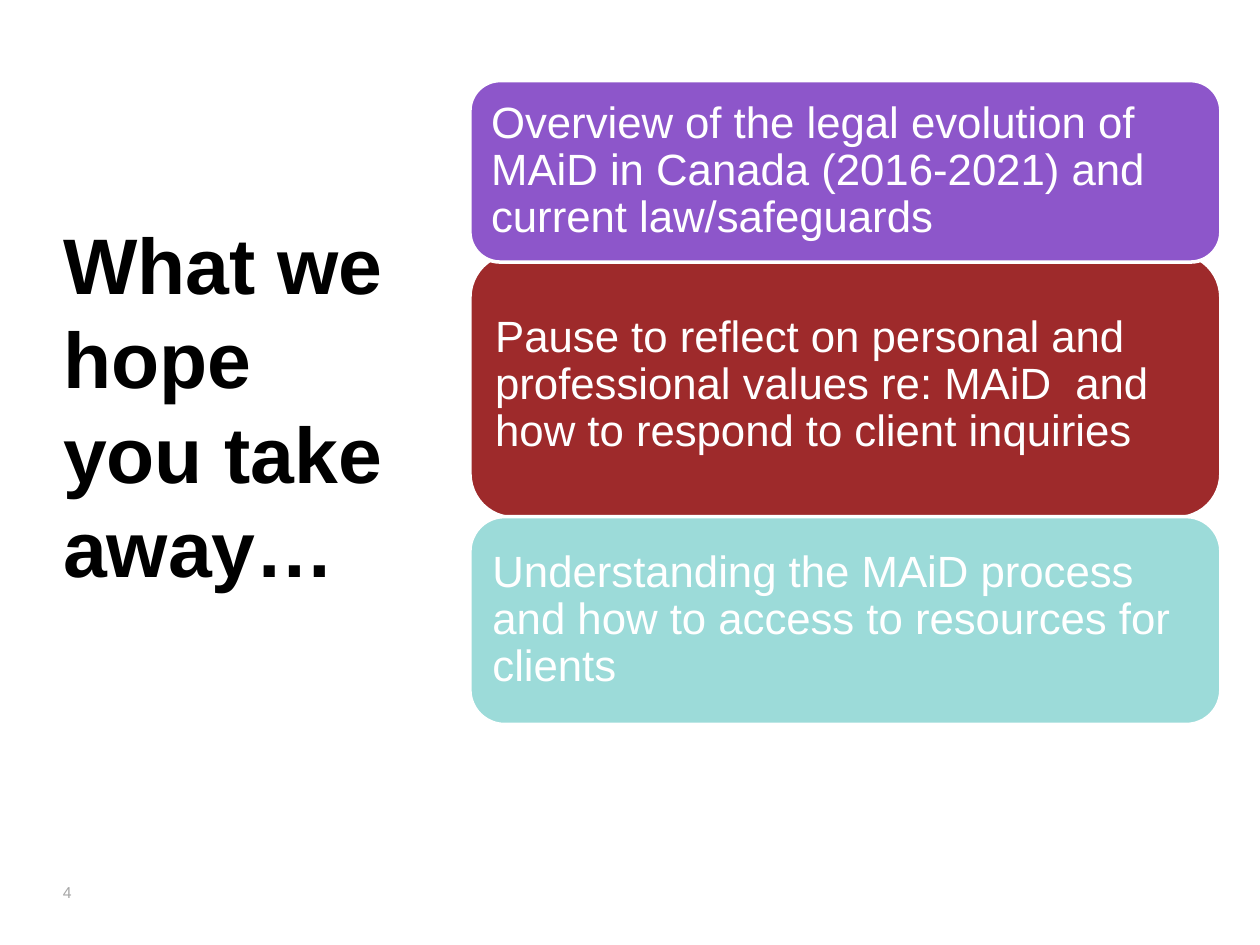
from dataclasses import dataclass

from pptx import Presentation
from pptx.dml.color import RGBColor
from pptx.enum.shapes import MSO_SHAPE as Preset
from pptx.enum.text import MSO_ANCHOR as Anchor, PP_ALIGN as Align
from pptx.slide import Slide
from pptx.text.text import TextFrame
from pptx.util import Inches, Pt

SLIDE_WIDTH, SLIDE_HEIGHT = 10, 7.5
MARGIN = 0.05 * SLIDE_WIDTH
CARD_LEFT = 0.373 * SLIDE_WIDTH
CARD_WIDTH = 0.596 * SLIDE_WIDTH


@dataclass(frozen=True)
class Takeaway:
    top: float
    height: float
    fill: str
    wording: str


@dataclass(frozen=True)
class Label:
    wording: str
    top: float
    width: float
    height: float
    size: float
    color: str
    bold: bool = False
    anchor: Anchor = Anchor.TOP
    line_height: float | None = None


TAKEAWAYS = [
    Takeaway(2.01, 2.1, "9E2A2B",
             "Pause to reflect on personal and professional values re: MAiD  and "
             "how to respond to client inquiries"),
    Takeaway(0.64, 1.44, "8D56CA",
             "Overview of the legal evolution of MAiD in Canada (2016-2021) and "
             "current law/safeguards"),
    Takeaway(4.1, 1.65, "9CDBD9",
             "Understanding the MAiD process and how to access to resources for clients"),
]

LABELS = [
    Label("What we hope you take away…", 1.71, 2.75, 4.34, 45, "000000",
          bold=True, line_height=54),
    Label("4", 6.53, 2, 0.63, 9, "A6A6A6", anchor=Anchor.BOTTOM),
]


def rgb(color: str) -> RGBColor:
    return RGBColor.from_string(color)


def write(frame: TextFrame, wording: str, size: float, color: str,
          inset: float, anchor: Anchor, bold: bool = False) -> None:
    frame.word_wrap = True
    frame.vertical_anchor = anchor
    frame.margin_left = frame.margin_right = Inches(inset)
    frame.margin_top = frame.margin_bottom = Inches(inset)
    paragraph = frame.paragraphs[0]
    paragraph.alignment = Align.LEFT
    run = paragraph.add_run()
    run.text = wording
    run.font.name = "Arial"
    run.font.size = Pt(size)
    run.font.bold = bold
    run.font.color.rgb = rgb(color)


def draw_label(slide: Slide, label: Label) -> None:
    box = slide.shapes.add_textbox(Inches(MARGIN), Inches(label.top),
                                   Inches(label.width), Inches(label.height))
    write(box.text_frame, label.wording, label.size, label.color,
          0, label.anchor, label.bold)
    if label.line_height:
        box.text_frame.paragraphs[0].line_spacing = Pt(label.line_height)


def draw_takeaway(slide: Slide, takeaway: Takeaway) -> None:
    card = slide.shapes.add_shape(Preset.ROUNDED_RECTANGLE,
                                  Inches(CARD_LEFT), Inches(takeaway.top),
                                  Inches(CARD_WIDTH), Inches(takeaway.height))
    card.shadow.inherit = False
    card.fill.solid()
    card.fill.fore_color.rgb = rgb(takeaway.fill)
    card.line.color.rgb = rgb("FFFFFF")
    card.line.width = Pt(2)
    write(card.text_frame, takeaway.wording, 25, "FFFFFF", 0.1, Anchor.MIDDLE)
    card.text_frame.paragraphs[0].line_spacing = 0.9


def main() -> None:
    deck = Presentation()
    deck.slide_width = Inches(SLIDE_WIDTH)
    deck.slide_height = Inches(SLIDE_HEIGHT)
    slide = deck.slides.add_slide(deck.slide_layouts[6])
    for label in LABELS:
        draw_label(slide, label)
    for takeaway in TAKEAWAYS:
        draw_takeaway(slide, takeaway)
    deck.save("out.pptx")


if __name__ == "__main__":
    main()
